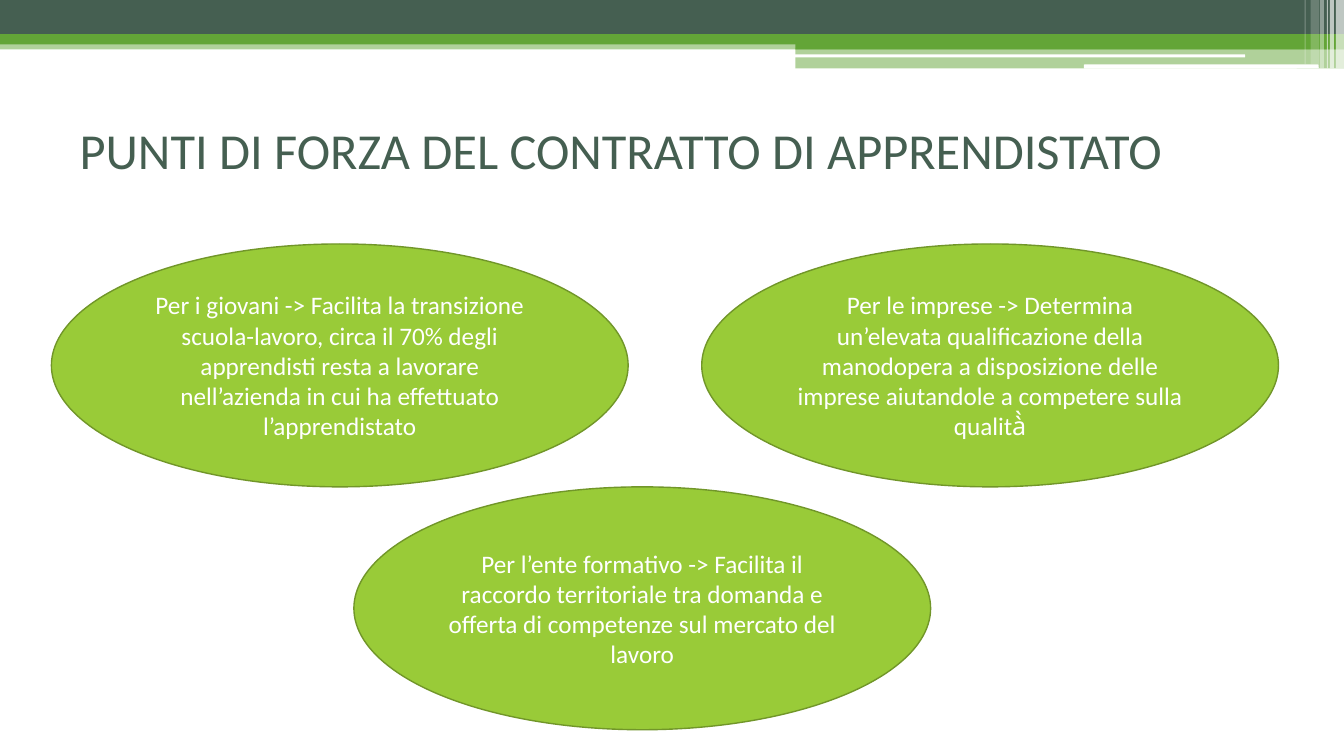
from lxml.etree import SubElement
from pptx import Presentation
from pptx.dml.color import RGBColor
from pptx.enum.shapes import MSO_SHAPE
from pptx.enum.text import MSO_ANCHOR, PP_ALIGN
from pptx.oxml.ns import qn
from pptx.util import Inches, Pt

FONT = "Calibri"
COLORS = {
    "dark": "455F51",
    "green": "63A537",
    "lime": "99CB38",
    "outline": "719629",
    "white": "FFFFFF",
}

TITLE = "PUNTI DI FORZA DEL CONTRATTO DI APPRENDISTATO"

# Text, left, top of each strength
STRENGTHS = [
    ("Per i giovani -> Facilita la transizione scuola-lavoro, circa il 70% degli "
     "apprendisti resta a lavorare nell’azienda in cui ha effettuato l’apprendistato",
     0.51, 2.42),
    ("Per le imprese -> Determina un’elevata qualificazione della manodopera a "
     "disposizione delle imprese aiutandole a competere sulla qualità̀",
     6.96, 2.42),
    ("Per l’ente formativo -> Facilita il raccordo territoriale tra domanda e "
     "offerta di competenze sul mercato del lavoro",
     3.51, 4.83),
]
OVAL_WIDTH, OVAL_HEIGHT = 5.72, 2.41

# Left, top, width, height, color, opacity in percent
BANDS = [
    (0, 0.4, 13.33, 0.09, "green", 50),
    (0, 0, 13.33, 0.34, "dark", 100),
    (0, 0.34, 13.33, 0.1, "green", 100),
    (7.89, 0.39, 5.44, 0.1, "green", 100),
    (7.89, 0.48, 5.44, 0.2, "green", 50),
]
HIGHLIGHTS = [
    (7.88, 0.54, 4.47, 0.03, "white", 100),
    (10.75, 0.64, 2.33, 0.04, "white", 100),
]
# Left, width, height, opacity in percent
STRIPES = [
    (13.25, 0.08, 0.68, 65),
    (13.19, 0.04, 0.68, 65),
    (13.16, 0.01, 0.68, 60),
    (13.09, 0.04, 0.68, 40),
    (13, 0.08, 0.64, 20),
    (12.94, 0.01, 0.64, 30),
]


def color(name):
    return RGBColor.from_string(COLORS[name])


def add_filled(preset, left, top, width, height, fill, opacity=100):
    shape = slide.shapes.add_shape(
        preset, Inches(left), Inches(top), Inches(width), Inches(height))
    shape.shadow.inherit = False
    shape.fill.solid()
    shape.fill.fore_color.rgb = color(fill)
    shape.line.fill.background()
    if opacity < 100:
        tint = shape.fill._xPr.find(qn("a:solidFill"))[0]
        SubElement(tint, qn("a:alpha")).set("val", str(opacity * 1000))
    return shape


def format_text(frame, size, fill, alignment):
    frame.word_wrap = True
    frame.vertical_anchor = MSO_ANCHOR.MIDDLE
    paragraph = frame.paragraphs[0]
    paragraph.alignment = alignment
    font = paragraph.runs[0].font
    font.name, font.size = FONT, Pt(size)
    font.color.rgb = color(fill)


presentation = Presentation()
presentation.slide_width = Inches(13.33)
presentation.slide_height = Inches(7.5)
slide = presentation.slides.add_slide(presentation.slide_layouts[5])

# Header decoration
for band in BANDS:
    add_filled(MSO_SHAPE.RECTANGLE, *band)
for highlight in HIGHLIGHTS:
    add_filled(MSO_SHAPE.ROUNDED_RECTANGLE, *highlight)
for left, width, height, opacity in STRIPES:
    add_filled(MSO_SHAPE.RECTANGLE, left, 0, width, height, "white", opacity)

# Title
title = slide.shapes.title
title.left, title.top = Inches(0.69), Inches(0.9)
title.width, title.height = Inches(12), Inches(1.17)
title.text_frame.text = TITLE
format_text(title.text_frame, 36, "dark", PP_ALIGN.LEFT)

# Strengths
for text, left, top in STRENGTHS:
    oval = add_filled(MSO_SHAPE.OVAL, left, top, OVAL_WIDTH, OVAL_HEIGHT, "lime")
    oval.line.color.rgb = color("outline")
    oval.line.width = Pt(1)
    oval.text_frame.text = text
    format_text(oval.text_frame, 18, "white", PP_ALIGN.CENTER)

presentation.save("out.pptx")
